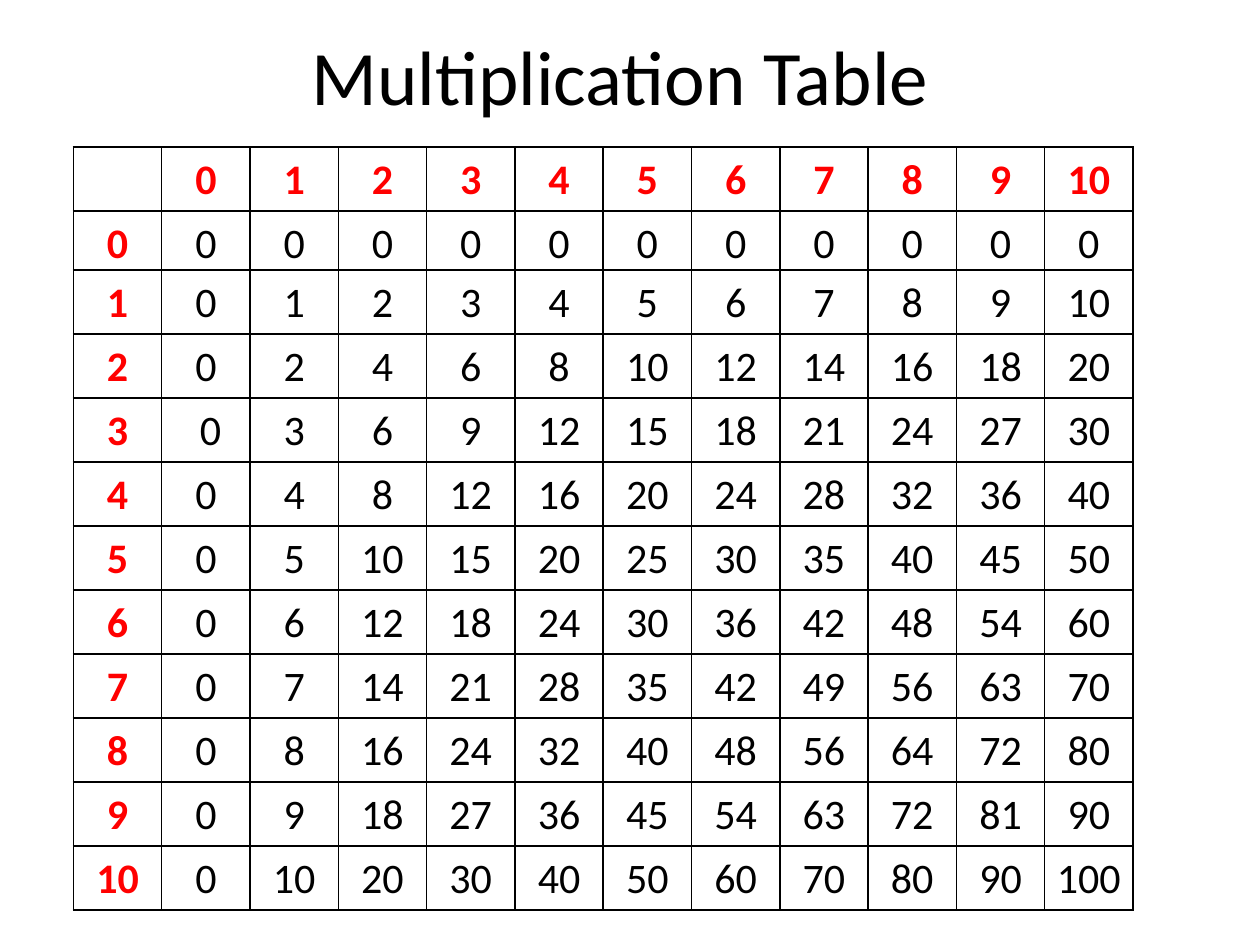
from lxml import etree
from pptx import Presentation
from pptx import util as u
from pptx.dml.color import RGBColor
from pptx.enum import text
from pptx.oxml import ns

TITLE = "Multiplication Table"
FACTORS = list(range(11))
SPECIAL = {(3, 0): " 0"}

FONT = "Calibri"
BLACK = RGBColor(0, 0, 0)
RED = RGBColor(255, 0, 0)

COL_W, ROW_H, ZERO_ROW_H = u.Cm(1.78), u.Cm(1.29), u.Cm(1.19)


def format_paragraph(p, size, color, bold=False):
    p.alignment = text.PP_ALIGN.CENTER
    p.font.name = FONT
    p.font.size = u.Pt(size)
    p.font.bold = bold
    p.font.color.rgb = color


def add_borders(cell):
    tc_pr = cell._tc.get_or_add_tcPr()
    for side in ("lnL", "lnR", "lnT", "lnB"):
        ln = etree.SubElement(tc_pr, ns.qn(f"a:{side}"), w=str(u.Pt(1)))
        fill = etree.SubElement(ln, ns.qn("a:solidFill"))
        etree.SubElement(fill, ns.qn("a:srgbClr"), val=str(BLACK))


def fill_cell(cell, value, heading):
    cell.margin_left = cell.margin_right = u.Cm(0.18)
    cell.margin_top = cell.margin_bottom = 0
    add_borders(cell)
    cell.fill.background()
    cell.text = str(value)
    p = cell.text_frame.paragraphs[0]
    p.line_spacing = 1.15
    format_paragraph(p, 24, RED if heading else BLACK, heading)


def main():
    prs = Presentation()
    prs.slide_width, prs.slide_height = u.Cm(25.4), u.Cm(19.05)
    s = prs.slides.add_slide(prs.slide_layouts[5])

    title = s.shapes.title
    title.left, title.top = u.Cm(1.07), u.Cm(-0.08)
    title.width, title.height = u.Cm(22.86), u.Cm(3.18)
    title.text = TITLE
    title.text_frame.vertical_anchor = text.MSO_ANCHOR.MIDDLE
    format_paragraph(title.text_frame.paragraphs[0], 44, BLACK)

    rows = [["", *FACTORS]]
    for a in FACTORS:
        rows.append([a] + [SPECIAL.get((a, b), a * b) for b in FACTORS])

    n = len(rows)
    frame = s.shapes.add_table(n, n, u.Cm(1.48), u.Cm(2.96),
                               COL_W * n, ROW_H * (n - 1) + ZERO_ROW_H)
    table = frame.table
    table.first_row = table.horz_banding = False
    for column in table.columns:
        column.width = COL_W
    for i, values in enumerate(rows):
        table.rows[i].height = ZERO_ROW_H if i == 1 else ROW_H
        for j, value in enumerate(values):
            fill_cell(table.cell(i, j), value, i == 0 or j == 0)

    prs.save("out.pptx")


if __name__ == "__main__":
    main()
